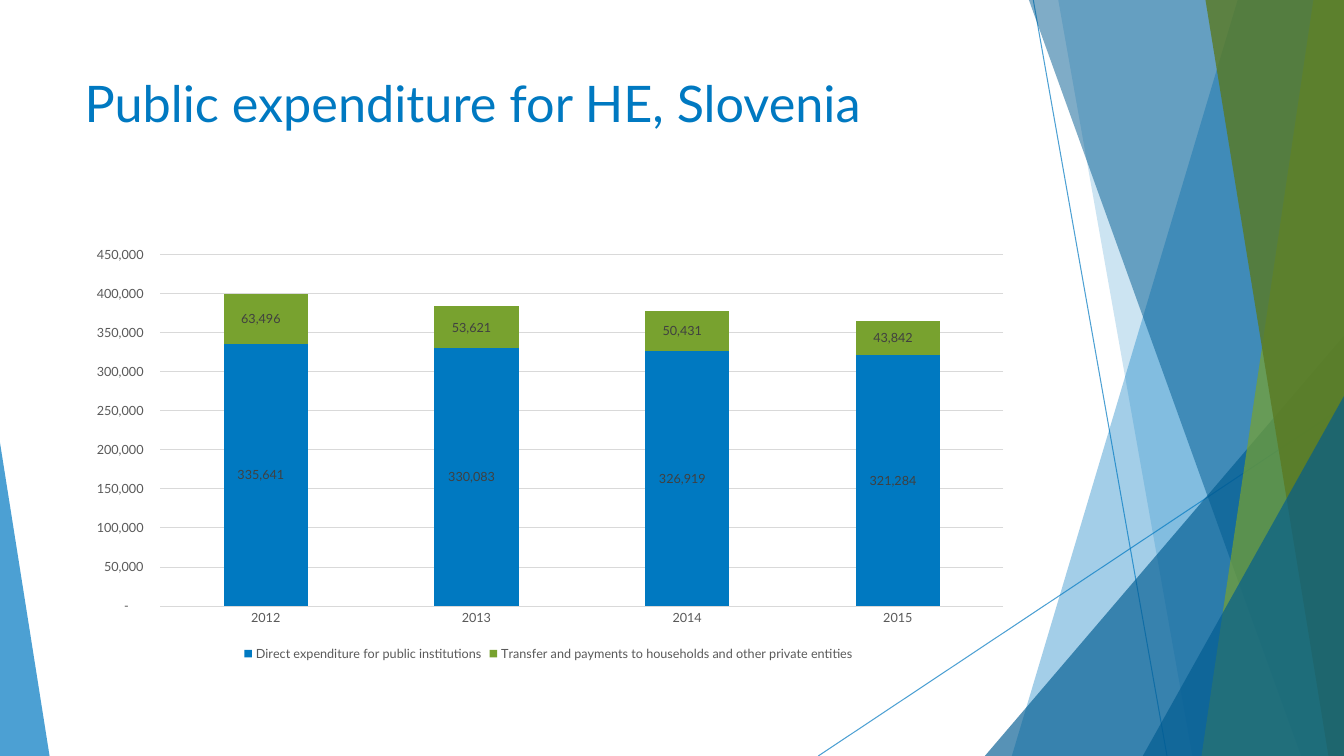
"""Build the slide on public expenditure for higher education in Slovenia."""
from dataclasses import dataclass

from lxml.etree import SubElement
from pptx import Presentation
from pptx.chart.data import CategoryChartData
from pptx.dml.color import RGBColor
from pptx.enum.chart import XL_CHART_TYPE, XL_LEGEND_POSITION, XL_TICK_MARK
from pptx.enum.shapes import MSO_CONNECTOR, MSO_SHAPE
from pptx.enum.text import MSO_ANCHOR, MSO_AUTO_SIZE, PP_ALIGN
from pptx.oxml.ns import qn
from pptx.util import Cm, Pt

WIDTH, HEIGHT = 33.87, 19.05
NUMBER = '_-* #,##0\\ _€_-;\\-* #,##0\\ _€_-;_-* "-"??\\ _€_-;_-@_-'


@dataclass(frozen=True)
class Theme:
    font: str = "Lato"
    blue: str = "0079C1"
    navy: str = "005B91"
    green: str = "78A22F"
    olive: str = "5A7A23"
    grid: str = "D9D9D9"
    text: str = "595959"
    label: str = "404040"
    title_size: float = 36
    chart_size: float = 10
    small_size: float = 9
    line_width: float = 0.75


class Deck:
    def __init__(self, theme):
        self.theme = theme
        self.file = Presentation()
        self.file.slide_width, self.file.slide_height = Cm(WIDTH), Cm(HEIGHT)
        self.slide = self.file.slides.add_slide(self.file.slide_layouts[5])
        self.shapes = self.slide.shapes

    def style(self, font, size, color):
        font.name, font.size = self.theme.font, Pt(size)
        font.color.rgb = RGBColor.from_string(color)

    def stroke(self, line, color):
        line.color.rgb = RGBColor.from_string(color)
        line.width = Pt(self.theme.line_width)

    def fade(self, props, percent):
        color = next(props.iter(qn("a:srgbClr")))
        SubElement(color, qn("a:alpha")).set("val", str(percent * 1000))

    def paint(self, shape, color, percent):
        shape.shadow.inherit = False
        shape.fill.solid()
        shape.fill.fore_color.rgb = RGBColor.from_string(color)
        shape.line.fill.background()
        self.fade(shape._element.spPr, percent)

    def line(self, start, end):
        link = self.shapes.add_connector(
            MSO_CONNECTOR.STRAIGHT, *map(Cm, start), *map(Cm, end))
        self.stroke(link.line, self.theme.blue)
        props = link._element.spPr
        self.fade(props, 70)
        SubElement(props, qn("a:effectLst"))

    def band(self, top, base, color, percent):
        path = self.shapes.build_freeform(Cm(top), 0)
        path.add_line_segments([
            (Cm(WIDTH), 0), (Cm(WIDTH), Cm(HEIGHT)), (Cm(base), Cm(HEIGHT))])
        self.paint(path.convert_to_shape(), color, percent)

    def wedge(self, left, top, width, tip, color, percent):
        shape = self.shapes.add_shape(
            MSO_SHAPE.ISOSCELES_TRIANGLE, Cm(left), Cm(top), Cm(width), Cm(HEIGHT - top))
        shape.adjustments[0] = tip
        self.paint(shape, color, percent)

    def title(self, text, left, top, width, height):
        box = self.shapes.title
        self.shapes._spTree.append(box._element)
        box.left, box.top, box.width, box.height = map(Cm, (left, top, width, height))
        frame = box.text_frame
        frame.word_wrap, frame.auto_size = True, MSO_AUTO_SIZE.NONE
        frame.vertical_anchor = MSO_ANCHOR.TOP
        para = frame.paragraphs[0]
        para.alignment = PP_ALIGN.LEFT
        run = para.add_run()
        run.text = text
        self.style(run.font, self.theme.title_size, self.theme.blue)

    def chart(self, years, series, left, top, width, height):
        theme = self.theme
        data = CategoryChartData(number_format=NUMBER)
        data.categories = years
        for name, values, _ in series:
            data.add_series(name, values)
        chart = self.shapes.add_chart(
            XL_CHART_TYPE.COLUMN_STACKED, *map(Cm, (left, top, width, height)), data).chart
        self.style(chart.font, theme.chart_size, "000000")
        chart.has_title = False
        chart.has_legend = True
        chart.legend.position = XL_LEGEND_POSITION.BOTTOM
        chart.legend.include_in_layout = False
        self.style(chart.legend.font, theme.small_size, theme.text)

        for axis in (chart.category_axis, chart.value_axis):
            axis.major_tick_mark = axis.minor_tick_mark = XL_TICK_MARK.NONE
            self.style(axis.tick_labels.font, theme.small_size, theme.text)
        self.stroke(chart.category_axis.format.line, theme.grid)
        scale = chart.value_axis
        scale.minimum_scale, scale.maximum_scale, scale.major_unit = 0, 450000, 50000
        scale.format.line.fill.background()
        self.stroke(scale.major_gridlines.format.line, theme.grid)
        scale.tick_labels.number_format = NUMBER
        scale.tick_labels.number_format_is_linked = False

        plot = chart.plots[0]
        plot.gap_width, plot.overlap, plot.vary_by_categories = 150, 100, False
        for bars, (_, _, color) in zip(plot.series, series):
            bars.format.fill.solid()
            bars.format.fill.fore_color.rgb = RGBColor.from_string(color)
            labels = bars.data_labels
            labels.show_value = True
            labels.number_format = NUMBER
            labels.number_format_is_linked = False
            self.style(labels.font, theme.small_size, theme.label)


def main():
    theme = Theme()
    deck = Deck(theme)
    deck.line((26.04, 0), (29.41, HEIGHT))
    deck.line((WIDTH, 10.24), (20.62, HEIGHT))
    deck.band(31.19, 25.5, theme.blue, 36)
    deck.band(26.67, 30.05, theme.blue, 20)
    deck.wedge(24.82, 8.46, 9.05, 1, theme.navy, 66)
    deck.band(25.93, 32.79, theme.navy, 50)
    deck.band(33.1, 30.28, theme.green, 70)
    deck.band(30.38, 33.48, theme.olive, 80)
    deck.wedge(28.8, 9.98, 5.07, 1, theme.navy, 66)
    deck.wedge(0, 11.15, 1.25, 0, theme.blue, 70)
    deck.title("Public expenditure for HE, Slovenia", 1.88, 1.7, 23.88, 3.66)
    deck.chart(
        ("2012", "2013", "2014", "2015"),
        [("Direct expenditure for public institutions",
          (335641, 330083, 326919, 321284), theme.blue),
         ("Transfer and payments to households and other private entities",
          (63496, 53621, 50431, 43842), theme.green)],
        1.88, 6, 23.88, 10.77)
    deck.file.save("out.pptx")


if __name__ == "__main__":
    main()
